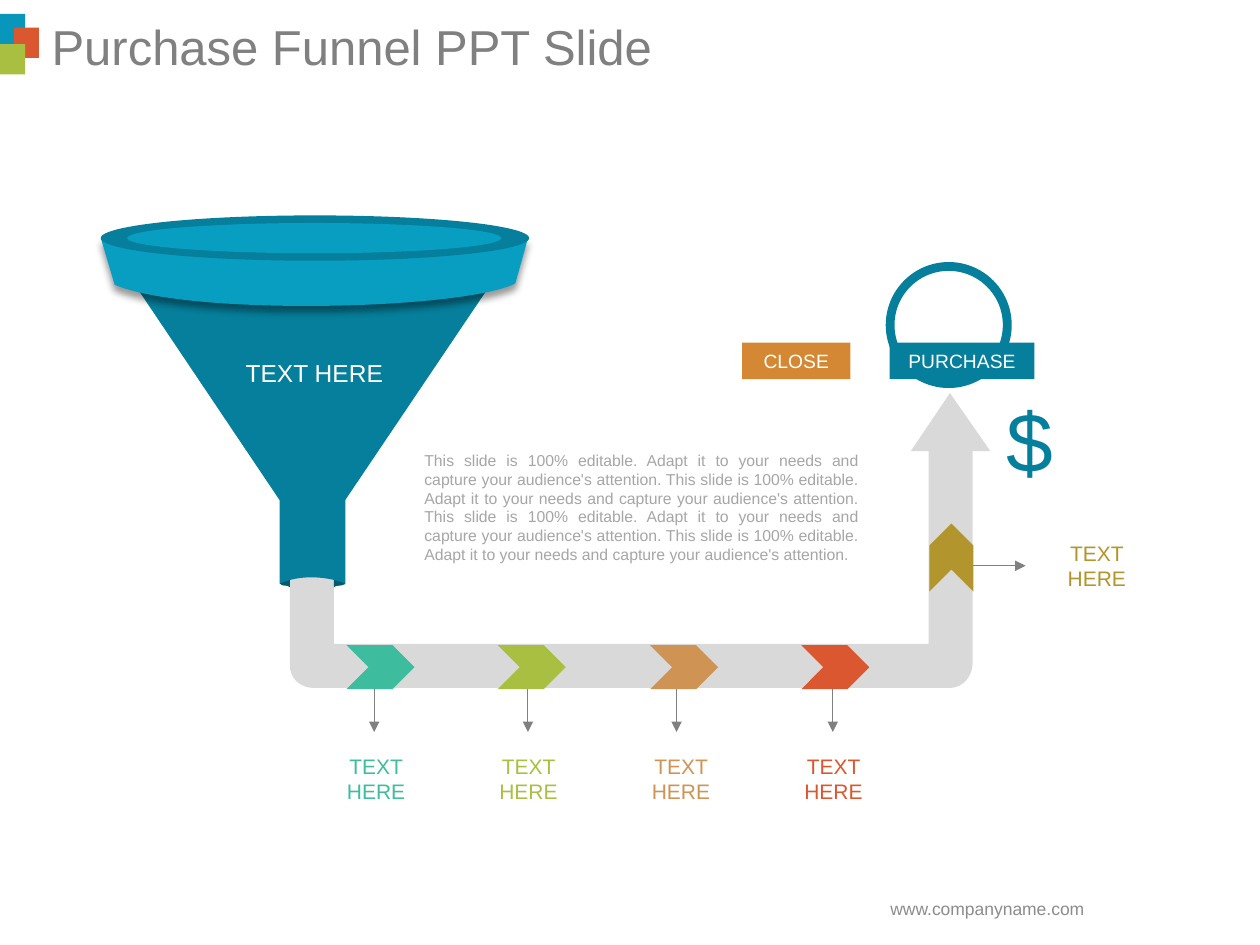
from lxml.etree import SubElement
from pptx import Presentation
from pptx.dml.color import RGBColor
from pptx.enum.shapes import MSO_CONNECTOR, MSO_SHAPE
from pptx.enum.text import MSO_ANCHOR, PP_ALIGN
from pptx.oxml import parse_xml
from pptx.oxml.ns import nsdecls, qn
from pptx.util import Inches, Pt

COLORS = {
    "teal": "067F9C", "light teal": "079EC1", "dark teal": "045B70",
    "logo blue": "0897BA", "pipe": "D9D9D9", "orange": "D58833",
    "mint": "3EBC9E", "green": "A9BF41", "tan": "CF9453", "red": "DB572F",
    "gold": "B2952C", "gray": "808080", "body": "A6A6A6", "footer": "8C8C8C",
    "white": "FFFFFF",
}


def paint(shape, color):
    shape.fill.solid()
    shape.fill.fore_color.rgb = RGBColor.from_string(COLORS[color])
    shape.line.fill.background()
    shape.shadow.inherit = False


def write(shape, text, size, color, alignment=PP_ALIGN.CENTER):
    frame = shape.text_frame
    frame.word_wrap = True
    frame.vertical_anchor = MSO_ANCHOR.MIDDLE
    paragraph = frame.paragraphs[0]
    paragraph.alignment = alignment
    run = paragraph.add_run()
    run.text = text
    font_format = {"name": "Arial", "size": Pt(size), "bold": False}
    for attribute, value in font_format.items():
        setattr(run.font, attribute, value)
    run.font.color.rgb = RGBColor.from_string(COLORS[color])


presentation = Presentation()
presentation.slide_width = Inches(10)
presentation.slide_height = Inches(7.5)
slide = presentation.slides.add_slide(presentation.slide_layouts[5])
shapes = slide.shapes

# Title
title = shapes.title
title_place = {"left": 0.31, "top": 0.08, "width": 9.69, "height": 0.57}
for attribute, value in title_place.items():
    setattr(title, attribute, Inches(value))
write(title, "Purchase Funnel PPT Slide", 28, "gray", PP_ALIGN.LEFT)

# Arrows from the pipe stages to their labels
arrows = [(x, 5.39, x, 5.81) for x in (2.97, 4.19, 5.37, 6.61)]
arrows.append((7.71, 4.49, 8.14, 4.49))
for ends in arrows:
    arrow = shapes.add_connector(MSO_CONNECTOR.STRAIGHT, *map(Inches, ends))
    arrow.line.color.rgb = RGBColor.from_string(COLORS["gray"])
    arrow.line.width = Pt(0.5)
    SubElement(arrow.line._get_or_add_ln(), qn("a:tailEnd"), type="triangle")
    SubElement(arrow._element.spPr, qn("a:effectLst"))

# Pipe, spout lips, spout, cone and rim: two numbers are a corner, six a curve
outlines = [
    ("pipe", [
        (7.54, 3.12), (7.86, 3.58), (7.72, 3.58), (7.72, 5.26),
        (7.72, 5.37, 7.64, 5.46, 7.54, 5.46), (2.49, 5.46),
        (2.38, 5.46, 2.3, 5.38, 2.3, 5.28), (2.3, 4.36),
        (2.3, 4.26, 2.38, 4.19, 2.47, 4.19),
        (2.57, 4.19, 2.65, 4.26, 2.65, 4.36),
        (2.65, 5.11), (7.37, 5.11), (7.37, 3.58), (7.23, 3.58)]),
    ("dark teal", [
        (2.65, 4.59), (2.65, 4.66), (2.67, 4.65),
        (2.71, 4.65, 2.74, 4.64, 2.74, 4.63),
        (2.74, 4.61, 2.71, 4.6, 2.67, 4.6)]),
    ("dark teal", [
        (2.3, 4.6), (2.3, 4.66), (2.28, 4.65),
        (2.24, 4.65, 2.22, 4.64, 2.22, 4.63),
        (2.22, 4.62, 2.24, 4.61, 2.28, 4.6)]),
    ("teal", [
        (2.22, 3.83), (2.74, 3.83), (2.74, 4.63),
        (2.66, 4.6, 2.44, 4.54, 2.22, 4.63)]),
    ("teal", [(1.01, 2.17), (3.98, 2.13), (2.74, 3.97), (2.22, 3.97)]),
    ("light teal", [
        (0.8, 1.89), (4.19, 1.89), (4.09, 2.25),
        (3.67, 2.46, 1.49, 2.51, 0.91, 2.26)]),
]
for color, segments in outlines:
    points = [(Inches(x), Inches(y)) for segment in segments
              for x, y in zip(segment[::2], segment[1::2])]
    builder = shapes.build_freeform(*points[0])
    builder.add_line_segments(points[1:], close=True)
    outline = builder.convert_to_shape()
    paint(outline, color)
    # Join the three points of each curve into one Bezier segment
    lines = iter(list(outline._element.iter(qn("a:lnTo"))))
    for segment in segments[1:]:
        parts = [next(lines) for _ in segment[::2]]
        if len(parts) == 3:
            curve = parse_xml(f'<a:cubicBezTo {nsdecls("a")}/>')
            parts[0].addprevious(curve)
            for part in parts:
                curve.append(part[0])
                part.getparent().remove(part)

# The rim, drawn last, ends at its curve and has a soft shadow
outline.height = Inches(0.54)
next(outline._element.iter(qn("a:path"))).set("h", str(Inches(0.54)))
effects = outline._element.spPr.find(qn("a:effectLst"))
effects.append(parse_xml(
    f'<a:outerShdw {nsdecls("a")} blurRad="{Pt(4)}" dist="{Pt(3)}" dir="5400000" '
    'algn="t" rotWithShape="0"><a:srgbClr val="000000"><a:alpha val="40000"/>'
    '</a:srgbClr></a:outerShdw>'))

# Funnel opening, purchase ring and buttons, corner squares
presets = [
    (MSO_SHAPE.OVAL, "teal", (0.8, 1.71, 3.4, 0.36), None),
    (MSO_SHAPE.OVAL, "light teal", (1.01, 1.77, 2.97, 0.24), None),
    (MSO_SHAPE.DONUT, "teal", (7.03, 2.08, 1, 1), None),
    (MSO_SHAPE.RECTANGLE, "orange", (5.89, 2.72, 0.86, 0.29), "CLOSE"),
    (MSO_SHAPE.RECTANGLE, "teal", (7.06, 2.72, 1.15, 0.29), "PURCHASE"),
    (MSO_SHAPE.RECTANGLE, "logo blue", (0, 0.11, 0.2, 0.24), None),
    (MSO_SHAPE.RECTANGLE, "red", (0.11, 0.22, 0.2, 0.24), None),
    (MSO_SHAPE.RECTANGLE, "green", (0, 0.35, 0.2, 0.24), None),
]
for kind, color, place, text in presets:
    shape = shapes.add_shape(kind, *map(Inches, place))
    paint(shape, color)
    if kind == MSO_SHAPE.DONUT:
        shape.adjustments[0] = 0.07
    if text:
        write(shape, text, 11, "white")

# Stages: a chevron in the pipe and a label in the same colour
stages = [
    (color, left, 5.12, 0, (2.45 + 1.21 * i, 5.93, 1.07, 0.5))
    for i, (color, left) in enumerate(
        [("mint", 2.75), ("green", 3.95), ("tan", 5.16), ("red", 6.36)])]
stages.append(("gold", 7.28, 4.25, 270, (8.21, 4.24, 0.99, 0.5)))
for color, left, top, rotation, label_place in stages:
    chevron = shapes.add_shape(
        MSO_SHAPE.CHEVRON, Inches(left), Inches(top), Inches(0.54), Inches(0.35))
    chevron.rotation = rotation
    paint(chevron, color)
    label = shapes.add_textbox(*map(Inches, label_place))
    write(label, "TEXT HERE", 12, color)

# Remaining texts
sentences = ("This slide is 100% editable. Adapt it to your needs "
             "and capture your audience's attention. ")
texts = [
    ((1.74, 2.79, 1.51, 0.34), "TEXT HERE", 14, "white", PP_ALIGN.CENTER),
    ((3.27, 3.52, 3.64, 1.01), sentences * 4, 9, "body", PP_ALIGN.JUSTIFY),
    ((7.85, 3.03, 0.64, 0.91), "$", 48, "teal", PP_ALIGN.CENTER),
    ((6.44, 7.01, 2.79, 0.4), "www.companyname.com", 10, "footer", PP_ALIGN.CENTER),
]
for place, text, size, color, alignment in texts:
    write(shapes.add_textbox(*map(Inches, place)), text, size, color, alignment)

presentation.save("out.pptx")
